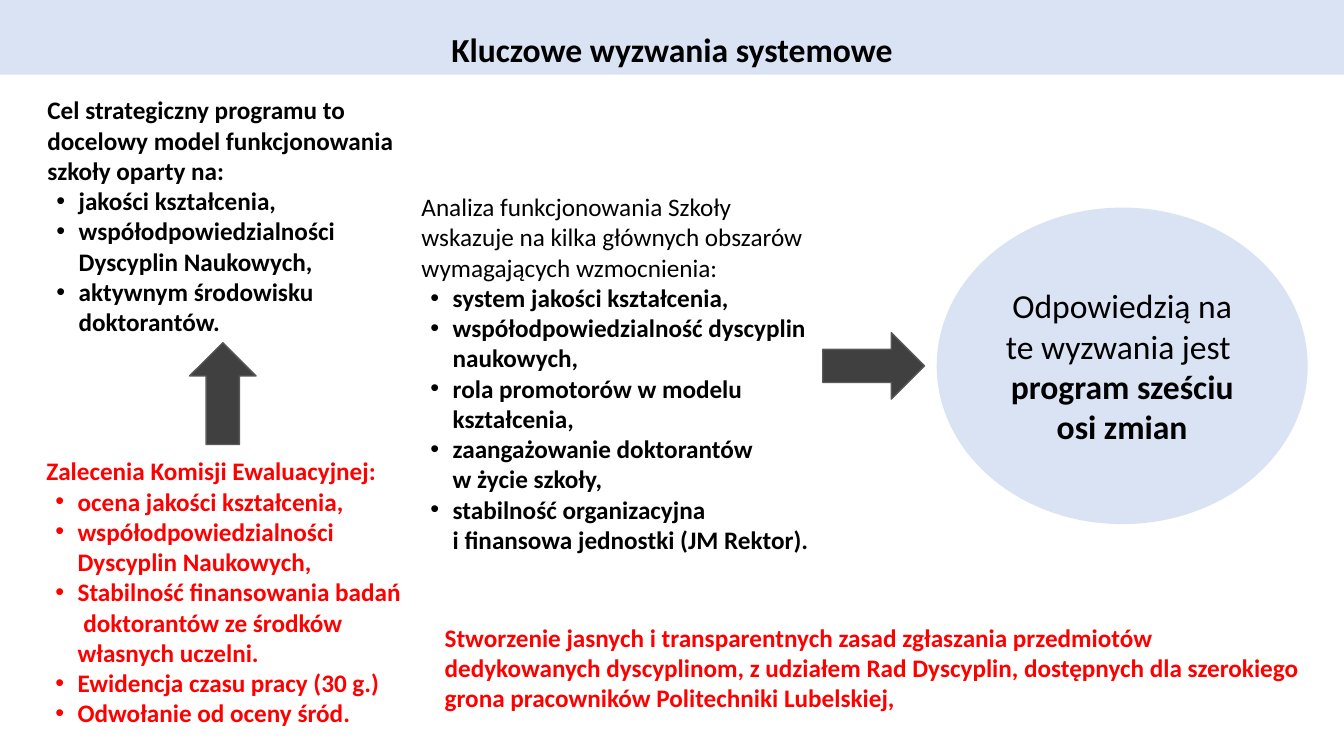
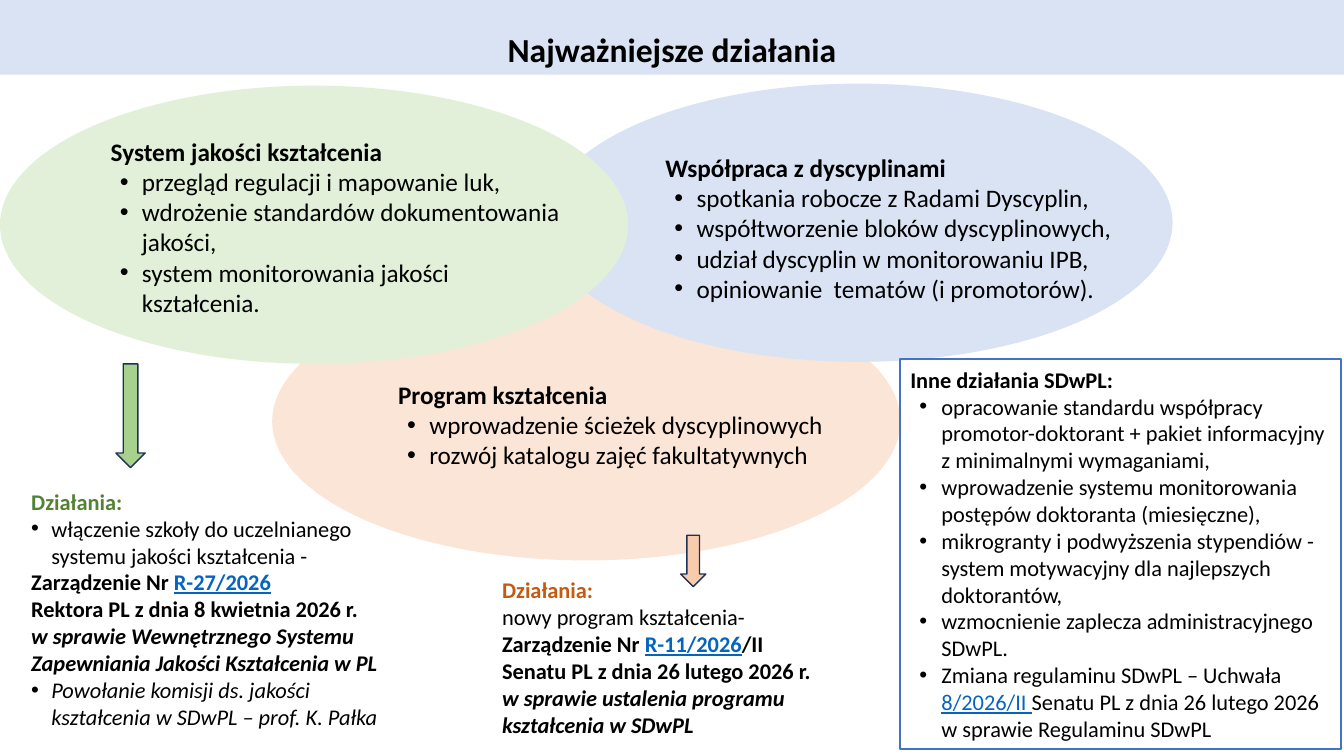
from lxml.etree import SubElement
from pptx import Presentation
from pptx.dml.color import RGBColor
from pptx.enum.shapes import MSO_SHAPE
from pptx.enum.text import MSO_ANCHOR, MSO_AUTO_SIZE, PP_ALIGN
from pptx.oxml.ns import qn
from pptx.util import Inches, Pt

# Shared style
FONT = "Calibri"
BLACK, RED, DARK_GRAY, GRAY = "000000", "FF0000", "404040", "595959"
PALE_BLUE, PALE_GREEN, PALE_ORANGE = "DAE3F3", "E2F0D9", "FBE5D6"
GREEN, ORANGE, NAVY, BLUE = "548235", "C55A11", "1E3256", "4472C4"
LINK = {"color": "0563C1", "underline": True}
WIDE_BULLET, TIGHT_BULLET = (0.31, -0.22), (0.2, -0.2)
BAND = (0, 0, 13.33, 0.74)
COMPARISON_LAYOUT, TWO_CONTENT_LAYOUT = 4, 3
OVAL_SIZE = (6.23, 2.76)


def rgb(value):
    return RGBColor.from_string(value)


def place(shape, left, top, width, height):
    shape.left, shape.top = Inches(left), Inches(top)
    shape.width, shape.height = Inches(width), Inches(height)


# Text
def line(*spans, bullet=None, **style):
    """Describe one paragraph; a span is a string or (string, style)."""
    return spans, bullet, style


def bullets(*texts, **style):
    return [line(text, bullet=WIDE_BULLET, **style) for text in texts]


def set_indent(para, bullet):
    properties = para._p.get_or_add_pPr()
    margin, indent = bullet or (0, 0)
    properties.set("marL", str(Inches(margin)))
    properties.set("indent", str(Inches(indent)))
    if bullet:
        SubElement(properties, qn("a:buFont"), typeface="Arial")
        SubElement(properties, qn("a:buChar"), char="•")
    else:
        SubElement(properties, qn("a:buNone"))


def add_span(para, text, size=18, color=BLACK, bold=False, italic=False,
             underline=False):
    for number, part in enumerate(text.split("\n")):
        if number:
            para.add_line_break()
        span = para.add_run()
        span.text = part
        font = span.font
        font.name, font.size = FONT, Pt(size)
        font.bold, font.italic, font.underline = bold, italic, underline
        font.color.rgb = rgb(color)


def write_text(box, lines, align=PP_ALIGN.LEFT, anchor=MSO_ANCHOR.TOP, **style):
    frame = box.text_frame
    frame.word_wrap = True
    frame.auto_size = MSO_AUTO_SIZE.NONE
    frame.vertical_anchor = anchor
    for number, (spans, bullet, line_style) in enumerate(lines):
        para = frame.add_paragraph() if number else frame.paragraphs[0]
        set_indent(para, bullet)
        para.alignment = align
        para.space_before = Pt(0)
        for span in spans:
            text, span_style = (span, {}) if isinstance(span, str) else span
            add_span(para, text, **{**style, **line_style, **span_style})


# Slide elements
def add_page(deck, layout, title):
    page = deck.slides.add_slide(deck.slide_layouts[layout])
    band = page.shapes.title
    place(band, *BAND)
    band.fill.solid()
    band.fill.fore_color.rgb = rgb(PALE_BLUE)
    write_text(band, [line(title)], align=PP_ALIGN.CENTER,
               anchor=MSO_ANCHOR.BOTTOM, size=24, bold=True)
    bodies = [item for item in page.placeholders
              if item.placeholder_format.idx > 0]
    return page, bodies


def fill_body(body, position, lines, **style):
    place(body, *position)
    write_text(body, lines, **style)


def add_text_box(page, position, lines, **style):
    box = page.shapes.add_textbox(*map(Inches, position))
    write_text(box, lines, **style)


def add_figure(page, kind, position, fill=None, outline=None, weight=1):
    figure = page.shapes.add_shape(kind, *map(Inches, position))
    figure.shadow.inherit = False
    if fill:
        figure.fill.solid()
        figure.fill.fore_color.rgb = rgb(fill)
    else:
        figure.fill.background()
    if outline:
        figure.line.color.rgb = rgb(outline)
        figure.line.width = Pt(weight)
    else:
        figure.line.fill.background()
    return figure


# Slides
def build_challenges(deck):
    page, (goal, advice, analysis, rules) = add_page(
        deck, COMPARISON_LAYOUT, "Kluczowe wyzwania systemowe")

    # Text columns
    fill_body(goal, (0.37, 0.89, 3.72, 2.52), [
        line("Cel strategiczny programu to docelowy model funkcjonowania "
             "szkoły oparty na:"),
        *bullets("jakości kształcenia,",
                 "współodpowiedzialności Dyscyplin Naukowych,",
                 "aktywnym środowisku doktorantów."),
    ], bold=True)
    fill_body(advice, (0.36, 4.47, 3.72, 2.83), [
        line("Zalecenia Komisji Ewaluacyjnej:"),
        *bullets("ocena jakości kształcenia,",
                 "współodpowiedzialności Dyscyplin Naukowych,",
                 "Stabilność finansowania badań  doktorantów ze środków "
                 "własnych uczelni.",
                 "Ewidencja czasu pracy (30 g.)",
                 "Odwołanie od oceny śród."),
    ], bold=True, color=RED)
    fill_body(analysis, (4.08, 1.85, 4.24, 4.04), [
        line("Analiza funkcjonowania Szkoły wskazuje na kilka głównych "
             "obszarów wymagających wzmocnienia:"),
        *bullets("system jakości kształcenia,",
                 "współodpowiedzialność dyscyplin naukowych,",
                 "rola promotorów w modelu kształcenia,",
                 "zaangażowanie doktorantów \nw życie szkoły,",
                 "stabilność organizacyjna \ni finansowa jednostki (JM Rektor).",
                 bold=True),
    ])
    fill_body(rules, (4.31, 6.12, 8.83, 1.01), [
        line("Stworzenie jasnych i transparentnych zasad zgłaszania "
             "przedmiotów dedykowanych dyscyplinom, z udziałem Rad Dyscyplin, "
             "dostępnych dla szerokiego grona pracowników Politechniki "
             "Lubelskiej,"),
    ], bold=True, color=RED)

    # Answer and arrows
    answer = add_figure(page, MSO_SHAPE.OVAL, (9.29, 2.06, 3.68, 3.14), PALE_BLUE)
    answer.text_frame.margin_left = answer.text_frame.margin_right = Inches(0.14)
    write_text(answer, [
        line("Odpowiedzią na te wyzwania jest "),
        line("program sześciu osi zmian", bold=True),
    ], align=PP_ALIGN.CENTER, anchor=MSO_ANCHOR.MIDDLE, size=24)
    for kind, position in (
        (MSO_SHAPE.RIGHT_ARROW, (8.16, 3.3, 1.01, 0.66)),
        (MSO_SHAPE.UP_ARROW, (1.88, 3.4, 0.66, 1.01)),
    ):
        add_figure(page, kind, position, DARK_GRAY, GRAY)


def build_actions(deck):
    page, (quality_actions, program_actions) = add_page(
        deck, TWO_CONTENT_LAYOUT, "Najważniejsze działania")

    # Overlapping areas, then their texts
    areas = (
        ((2.7, 2.8), PALE_ORANGE, (3.85, 3.71, 4.67, 1.01),
         "Program kształcenia",
         ("wprowadzenie ścieżek dyscyplinowych",
          "rozwój katalogu zajęć fakultatywnych")),
        ((5.4, 0.83), PALE_BLUE, (6.5, 1.46, 4.68, 1.62),
         "Współpraca z dyscyplinami",
         ("spotkania robocze z Radami Dyscyplin,",
          "współtworzenie bloków dyscyplinowych,",
          "udział dyscyplin w monitorowaniu IPB,",
          "opiniowanie  tematów (i promotorów).")),
        ((0, 0.85), PALE_GREEN, (1, 1.3, 4.67, 2.22),
         "System jakości kształcenia",
         ("przegląd regulacji i mapowanie luk,",
          "wdrożenie standardów dokumentowania jakości,",
          "system monitorowania jakości kształcenia.")),
    )
    for corner, fill, *_ in areas:
        add_figure(page, MSO_SHAPE.OVAL, corner + OVAL_SIZE, fill)
    for _, _, position, heading, items in areas:
        add_text_box(page, position, [line(heading, bold=True), *bullets(*items)])

    # Actions below the areas
    fill_body(quality_actions, (0.21, 4.79, 3.93, 2.52), [
        line("Działania:", bold=True, color=GREEN),
        line("włączenie szkoły do uczelnianego systemu jakości kształcenia -",
             bullet=TIGHT_BULLET),
        line("Zarządzenie Nr ", ("R-27/2026", LINK), " ", bold=True),
        line("Rektora PL z dnia 8 kwietnia 2026 r.", bold=True),
        line("w sprawie Wewnętrznego Systemu Zapewniania Jakości Kształcenia "
             "w PL", bold=True, italic=True),
        line("Powołanie komisji ds. jakości kształcenia w SDwPL – prof. "
             "K. Pałka", bullet=TIGHT_BULLET, italic=True),
    ], size=16)
    fill_body(program_actions, (4.88, 5.67, 3.93, 1.72), [
        line("Działania:", bold=True, color=ORANGE),
        line("nowy program kształcenia-"),
        line("Zarządzenie Nr ", ("R-11/2026", LINK), "/II", bold=True),
        line("Senatu PL z dnia 26 lutego 2026 r.", bold=True),
        line("w sprawie ustalenia programu kształcenia w SDwPL",
             bold=True, italic=True),
    ], size=16)
    for position, fill in (((1.15, 3.61, 0.29, 1.03), "A9D18E"),
                           ((6.75, 5.31, 0.25, 0.51), "F8CBAD")):
        add_figure(page, MSO_SHAPE.DOWN_ARROW, position, fill, NAVY)

    # Framed list of other actions
    frame = add_figure(page, MSO_SHAPE.RECTANGLE, (8.93, 3.56, 4.37, 3.87),
                       outline=BLUE, weight=1.5)
    write_text(frame, [
        line("Inne działania SDwPL:", bold=True),
        *bullets("opracowanie standardu współpracy promotor-doktorant + pakiet "
                 "informacyjny z minimalnymi wymaganiami,",
                 "wprowadzenie systemu monitorowania postępów doktoranta "
                 "(miesięczne),",
                 "mikrogranty i podwyższenia stypendiów - system motywacyjny "
                 "dla najlepszych doktorantów,",
                 "wzmocnienie zaplecza administracyjnego SDwPL."),
        line("Zmiana regulaminu SDwPL – Uchwała ", ("8/2026/II ", LINK),
             "Senatu PL z dnia 26 lutego 2026 w sprawie Regulaminu SDwPL",
             bullet=WIDE_BULLET),
    ], anchor=MSO_ANCHOR.MIDDLE, size=16)


def main():
    deck = Presentation()
    deck.slide_width, deck.slide_height = Inches(13.33), Inches(7.5)
    build_challenges(deck)
    build_actions(deck)
    deck.save("out.pptx")


if __name__ == "__main__":
    main()
